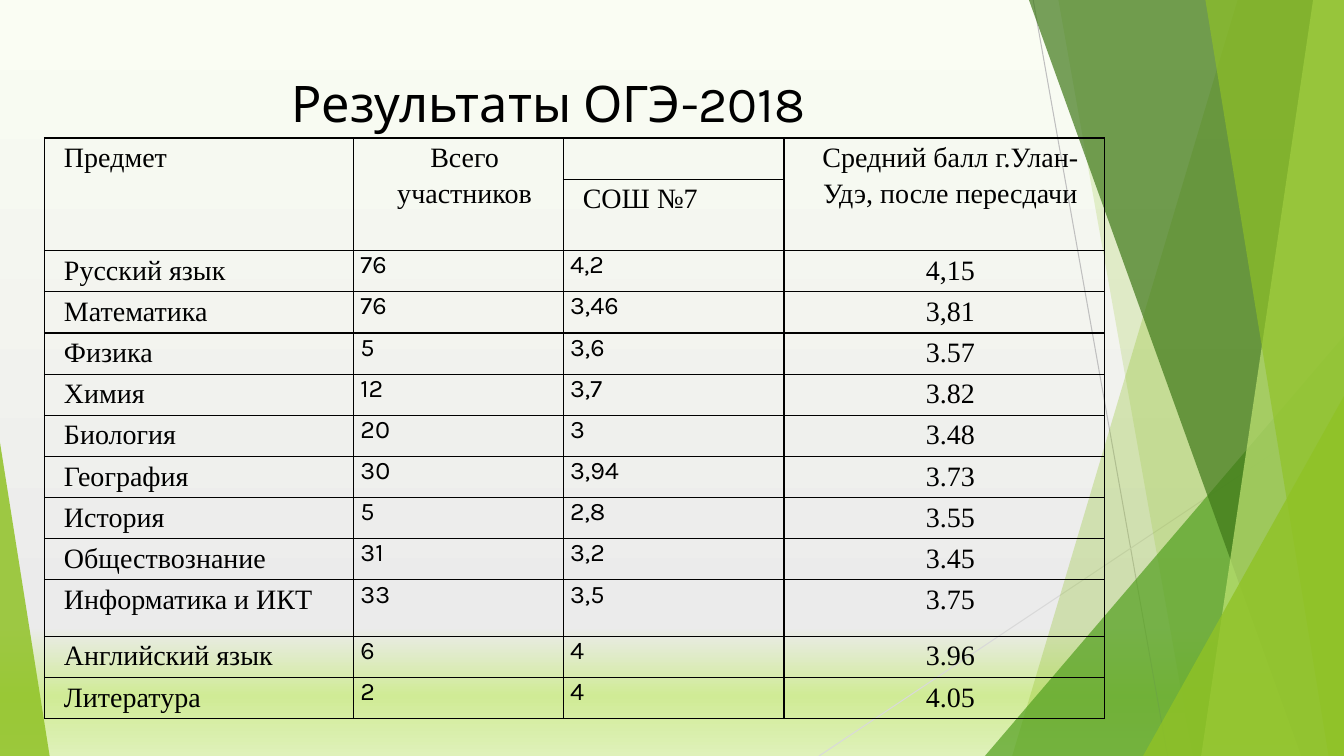
from lxml.etree import SubElement
from pptx import Presentation
from pptx.dml.color import RGBColor
from pptx.enum.shapes import MSO_CONNECTOR as Link, MSO_SHAPE as Form
from pptx.enum.text import MSO_ANCHOR as Anchor, MSO_AUTO_SIZE as Fit, PP_ALIGN as Align
from pptx.oxml import parse_xml
from pptx.oxml.ns import nsdecls, qn
from pptx.util import Pt

WIDE, HIGH = 960, 540
HEADS = ["Предмет", "Всего участников", "", "Средний балл г.Улан-Удэ, после пересдачи"]
MARKS = [
    ("Русский язык", "76", "4,2", "4,15"),
    ("Математика", "76", "3,46", "3,81"),
    ("Физика", "5", "3,6", "3.57"),
    ("Химия", "12", "3,7", "3.82"),
    ("Биология", "20", "3", "3.48"),
    ("География", "30", "3,94", "3.73"),
    ("История", "5", "2,8", "3.55"),
    ("Обществознание", "31", "3,2", "3.45"),
    ("Информатика и ИКТ", "33", "3,5", "3.75"),
    ("Английский язык", "6", "4", "3.96"),
    ("Литература", "2", "4", "4.05"),
]


def color(code):
    return RGBColor.from_string(code)


class Deck:
    serif, sans, ink = "Times New Roman", "Karla", "000000"

    def __init__(self):
        self.prs = Presentation()
        self.prs.slide_width, self.prs.slide_height = Pt(WIDE), Pt(HIGH)
        self.slide = self.prs.slides.add_slide(self.prs.slide_layouts[5])
        self.art = self.slide.shapes.add_group_shape().shapes

    def backdrop(self, stops):
        """Fill the background with a top-down gradient of (percent, colour) stops."""
        fill = self.slide.background.fill
        fill.gradient()
        fill.gradient_angle = 270
        items = self.slide.element.find(".//" + qn("a:gsLst"))
        for old in list(items):
            items.remove(old)
        for pos, code in stops:
            stop = SubElement(items, qn("a:gs"), pos=str(pos * 1000))
            SubElement(stop, qn("a:srgbClr"), val=code)

    def line(self, x1, y1, x2, y2, code):
        link = self.art.add_connector(Link.STRAIGHT, Pt(x1), Pt(y1), Pt(x2), Pt(y2))
        link.line.color.rgb, link.line.width = color(code), Pt(0.75)
        SubElement(link.element.spPr, qn("a:effectLst"))

    def paint(self, shape, code, alpha):
        """Give a shape a see-through fill and no outline."""
        shape.shadow.inherit = False
        shape.line.fill.background()
        shape.fill.solid()
        shape.fill.fore_color.rgb = color(code)
        tint = shape.element.spPr.find(qn("a:solidFill") + "/" + qn("a:srgbClr"))
        SubElement(tint, qn("a:alpha"), val=str(alpha * 1000))

    def band(self, top, foot, code, alpha):
        """Draw a full-height band from a slanted left edge to the slide's right edge."""
        pen = self.art.build_freeform(Pt(top), 0)
        spots = [(WIDE, 0), (WIDE, HIGH), (foot, HIGH)]
        pen.add_line_segments([(Pt(x), Pt(y)) for x, y in spots], close=True)
        self.paint(pen.convert_to_shape(), code, alpha)

    def wedge(self, x, y, wide, tip, code, alpha):
        """Draw a triangle that stands on the slide's bottom edge."""
        shape = self.art.add_shape(Form.ISOSCELES_TRIANGLE, Pt(x), Pt(y), Pt(wide), Pt(HIGH - y))
        shape.adjustments[0] = tip
        self.paint(shape, code, alpha)

    def add_text(self, para, text, size, font):
        run = para.add_run()
        run.text = text
        run.font.size, run.font.name = Pt(size), font
        run.font.color.rgb = color(self.ink)

    def title(self, text, x, y, wide, high):
        box = self.slide.shapes.title
        box.left, box.top, box.width, box.height = Pt(x), Pt(y), Pt(wide), Pt(high)
        frame = box.text_frame
        frame.word_wrap, frame.auto_size = True, Fit.NONE
        frame.vertical_anchor = Anchor.TOP
        para = frame.paragraphs[0]
        para.alignment = Align.CENTER
        self.add_text(para, text, 36, self.sans)

    def cell(self, cell, text, plain, mid):
        """Style a cell; plain cells use the sans font without indent or spacing."""
        cell.margin_left = cell.margin_right = Pt(5)
        cell.margin_top = cell.margin_bottom = 0
        cell.fill.background()
        props = cell._tc.get_or_add_tcPr()
        for spot, side in enumerate(("lnL", "lnR", "lnT", "lnB")):
            props.insert(spot, parse_xml(
                f'<a:{side} {nsdecls("a")} w="{Pt(1)}"><a:solidFill>'
                f'<a:srgbClr val="{self.ink}"/></a:solidFill></a:{side}>'))
        if not text:
            return
        para = cell.text_frame.paragraphs[0]
        if plain:
            self.add_text(para, text, 18, self.sans)
            return
        para.alignment = Align.CENTER if mid else Align.LEFT
        para.line_spacing, para.space_after = 1.15, Pt(8)
        para._p.get_or_add_pPr().set("marL", str(Pt(9)))
        self.add_text(para, text, 20, self.serif)

    def table(self, rows, x, y, wides, highs):
        frame = self.slide.shapes.add_table(
            len(rows), len(wides), Pt(x), Pt(y), Pt(sum(wides)), Pt(sum(highs)))
        grid = frame.table
        grid.first_row = grid.horz_banding = False
        for col, wide in zip(grid.columns, wides):
            col.width = Pt(wide)
        for r, (row, high) in enumerate(zip(rows, highs)):
            grid.rows[r].height = Pt(high)
            for c, text in enumerate(row):
                plain = r > 1 and c in (1, 2)
                self.cell(grid.cell(r, c), text, plain, c in (1, 3))
        for c in (0, 1, 3):
            grid.cell(0, c).merge(grid.cell(1, c))


def main():
    deck = Deck()
    deck.backdrop([(0, "FAFDF3"), (83, "EBEBEB"), (92, "D0EB96"), (100, "DFF1B9")])
    deck.line(738, 0, 834, HIGH, "BFBFBF")
    deck.line(WIDE, 290, 585, HIGH, "D9D9D9")
    deck.band(884, 723, "90C226", 30)
    deck.band(756, 852, "90C226", 20)
    deck.wedge(703.5, 240, 256.5, 1, "54A021", 72)
    deck.band(735, 929.5, "3F7819", 70)
    deck.band(938, 858, "C0E474", 70)
    deck.band(861, 949, "90C226", 65)
    deck.wedge(816.5, 283, 143.5, 1, "90C226", 80)
    deck.wedge(0, 316, 35.5, 0, "90C226", 85)

    rows = [HEADS, ("", "", "СОШ №7", ""), *MARKS]
    highs = [40.3 if row[0] == "Информатика и ИКТ" else 29.4 for row in rows]
    deck.table(rows, 31.7, 98.6, [220.8, 149.8, 157.7, 228.8], highs)
    deck.title("Результаты ОГЭ-2018", 53.3, 48.2, 676.8, 62.6)
    deck.prs.save("out.pptx")


if __name__ == "__main__":
    main()
